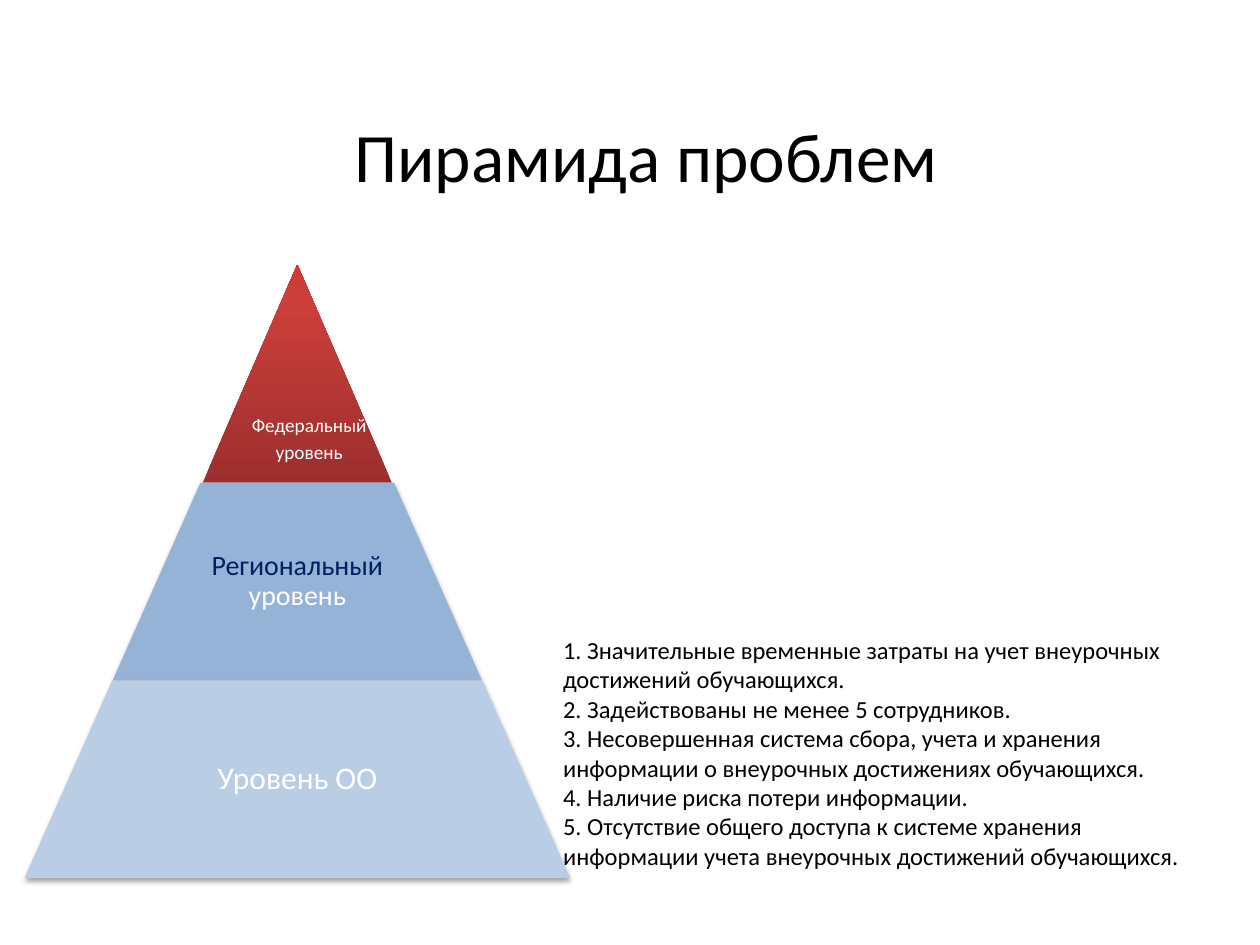
"""Builds the slide with a three-level pyramid of problems."""
import copy

import lxml.etree
import pptx
import pptx.dml.color
import pptx.enum.shapes
import pptx.enum.text
import pptx.oxml.ns
import pptx.util

Inches = pptx.util.Inches
Pt = pptx.util.Pt
ALIGN = pptx.enum.text.PP_ALIGN
ANCHOR = pptx.enum.text.MSO_ANCHOR
qn = pptx.oxml.ns.qn
COLORS = {
    "black": "000000", "white": "FFFFFF", "navy": "002060",
    "red_dark": "9C2F2D", "red": "CB3E3A", "red_light": "CE3B37",
    "blue": "95B3D7", "blue_light": "B9CDE5",
}


def rgb(name):
    return pptx.dml.color.RGBColor.from_string(COLORS[name])


def add_text(shapes, box, paragraphs, size, color="black", align=ALIGN.CENTER,
             anchor=ANCHOR.MIDDLE, insets=(0.1, 0.05, 0.1, 0.05),
             line_spacing=1.0, space_after=0):
    """Adds a text box; each paragraph is a list of (text, color or None)."""
    shape = shapes.add_textbox(*map(Inches, box))
    frame = shape.text_frame
    frame.word_wrap = True
    frame.vertical_anchor = anchor
    (frame.margin_left, frame.margin_top,
     frame.margin_right, frame.margin_bottom) = map(Inches, insets)
    for index, runs in enumerate(paragraphs):
        paragraph = frame.paragraphs[0] if index == 0 else frame.add_paragraph()
        paragraph.alignment = align
        paragraph.line_spacing = line_spacing
        paragraph.space_after = Pt(space_after)
        for text, run_color in runs:
            run = paragraph.add_run()
            run.text = text
            run.font.name = "Calibri"
            run.font.size = Pt(size)
            run.font.color.rgb = rgb(run_color or color)
    return shape


presentation = pptx.Presentation()
presentation.slide_width = Inches(10)
presentation.slide_height = Inches(7.5)
slide = presentation.slides.add_slide(presentation.slide_layouts[6])

add_text(slide.shapes, (1.98, 0.91, 6.29, 0.64), [[("Пирамида проблем", None)]], 39.6)

CENTER = 2.36
LEVELS = [
    {"top": 2.1, "height": 1.73, "width": 1.5, "slope": 0.5,
     "fill": None, "shadow": ("white", 100, 4, 4),
     "text_width": 1.5, "size": 11, "anchor": ANCHOR.BOTTOM,
     "insets": (0.21, 0.02, 0.02, 0.15),
     "paragraphs": [[("Федеральный", None)], [("уровень", None)]]},
    {"top": 3.83, "height": 1.57, "width": 2.93, "slope": 0.444,
     "fill": "blue", "shadow": ("black", 35, 3.1, 1.8),
     "text_width": 1.91, "size": 16, "anchor": ANCHOR.MIDDLE,
     "insets": (0.02,) * 4,
     "paragraphs": [[("Региональный ", "navy"), ("уровень", None)]]},
    {"top": 5.4, "height": 1.57, "width": 4.33, "slope": 0.444,
     "fill": "blue_light", "shadow": ("black", 35, 3.1, 1.8),
     "text_width": 2.82, "size": 18, "anchor": ANCHOR.MIDDLE,
     "insets": (0.03,) * 4,
     "paragraphs": [[("Уровень ОО", None)]]},
]

pyramid = slide.shapes.add_group_shape()
for level in LEVELS:
    top, height, width = level["top"], level["height"], level["width"]
    shape = pyramid.shapes.add_shape(
        pptx.enum.shapes.MSO_SHAPE.TRAPEZOID,
        Inches(CENTER - width / 2), Inches(top), Inches(width), Inches(height))
    shape.adjustments[0] = level["slope"]
    shape.line.fill.background()
    if level["fill"]:
        shape.fill.solid()
        shape.fill.fore_color.rgb = rgb(level["fill"])
    else:
        shape.fill.gradient()
        shape.fill.gradient_angle = 90
        stop_list = shape._element.spPr.find(".//" + qn("a:gsLst"))
        stop_list.insert(1, copy.deepcopy(stop_list[0]))
        stops = [(0, "red_dark"), (0.8, "red"), (1, "red_light")]
        for stop, (position, color) in zip(shape.fill.gradient_stops, stops):
            stop.position = position
            stop.color.rgb = rgb(color)

    shape.shadow.inherit = False
    color, opacity, blur, distance = level["shadow"]
    effects = shape._element.spPr.find(qn("a:effectLst"))
    shadow = lxml.etree.SubElement(
        effects, qn("a:outerShdw"), blurRad=str(Pt(blur)),
        dist=str(Pt(distance)), dir="5400000", rotWithShape="0")
    shadow_color = lxml.etree.SubElement(shadow, qn("a:srgbClr"), val=COLORS[color])
    lxml.etree.SubElement(shadow_color, qn("a:alpha"), val=str(opacity * 1000))

    text_width = level["text_width"]
    add_text(pyramid.shapes, (CENTER - text_width / 2, top, text_width, height),
             level["paragraphs"], level["size"], color="white",
             anchor=level["anchor"], insets=level["insets"],
             line_spacing=0.9, space_after=round(level["size"] * 0.3, 1))

PROBLEMS = [
    "1. Значительные временные затраты на учет внеурочных достижений обучающихся.",
    "2. Задействованы не менее 5 сотрудников.",
    "3. Несовершенная система сбора, учета и хранения информации о внеурочных достижениях обучающихся.",
    "4. Наличие риска потери информации.",
    "5. Отсутствие общего доступа к системе хранения информации учета внеурочных достижений обучающихся.",
]
problem_box = add_text(slide.shapes, (4.37, 4.99, 5.12, 2.22),
                       [[(problem, None)] for problem in PROBLEMS], 14,
                       align=ALIGN.LEFT, anchor=ANCHOR.TOP)
problem_box.text_frame.auto_size = pptx.enum.text.MSO_AUTO_SIZE.SHAPE_TO_FIT_TEXT

presentation.save("out.pptx")
